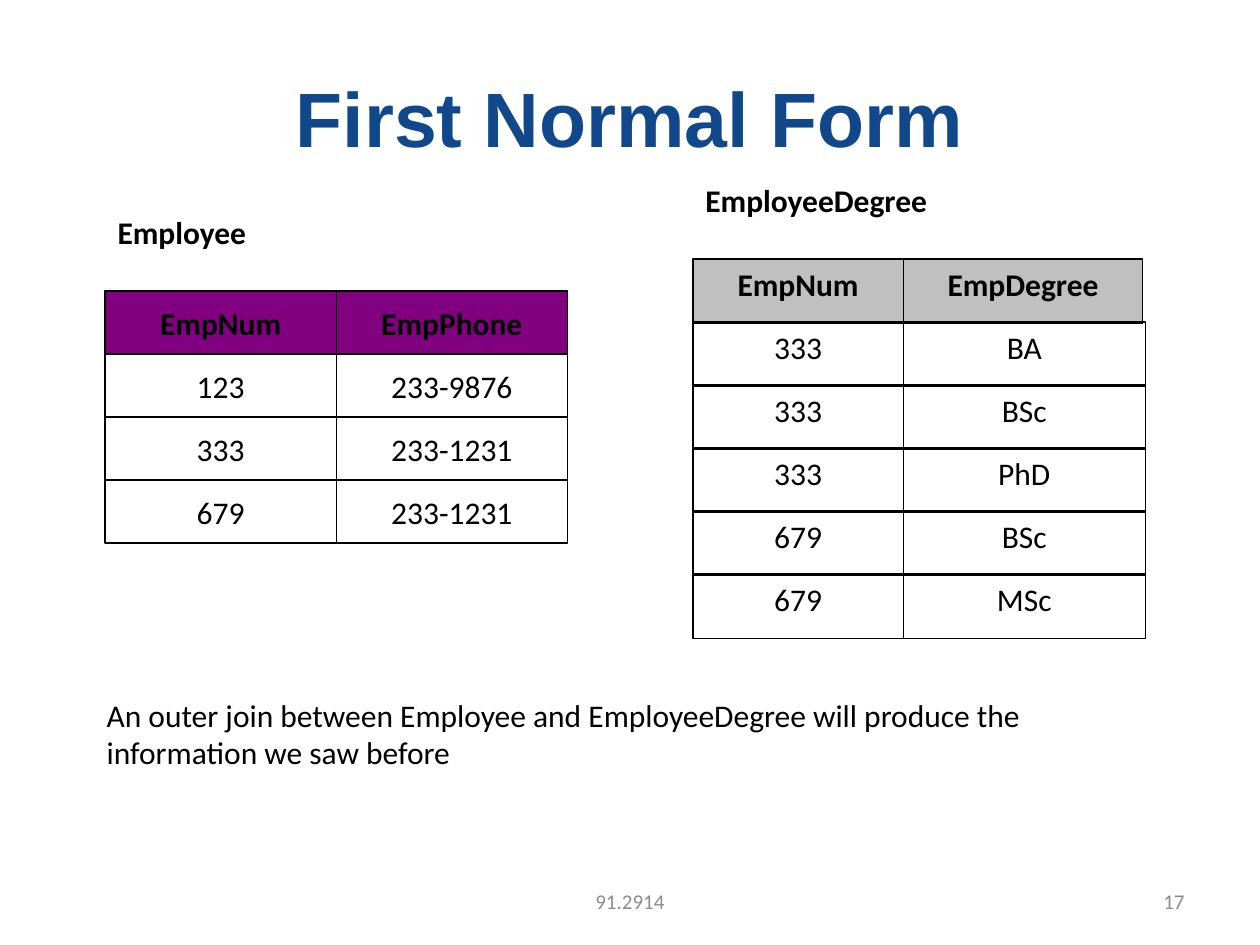
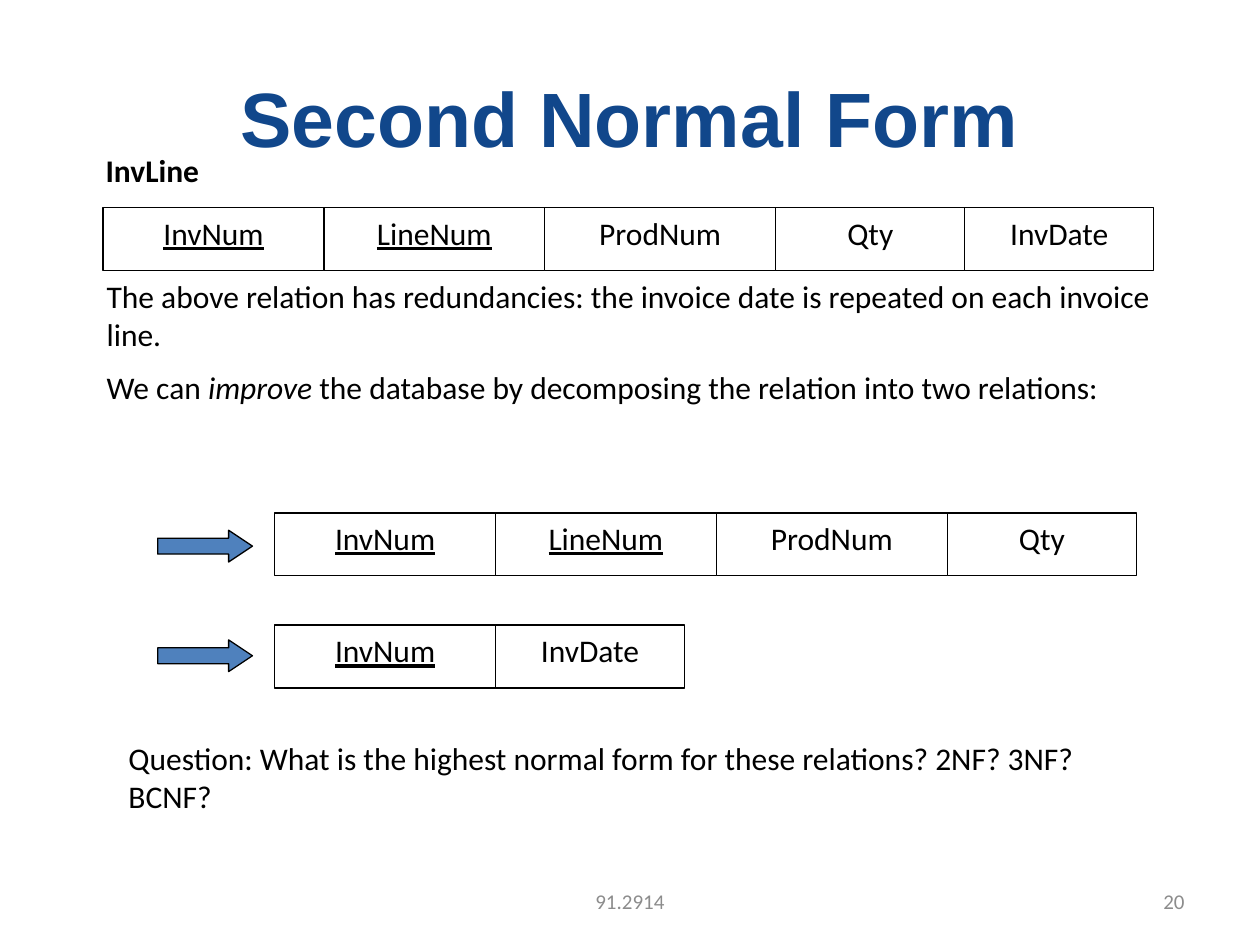
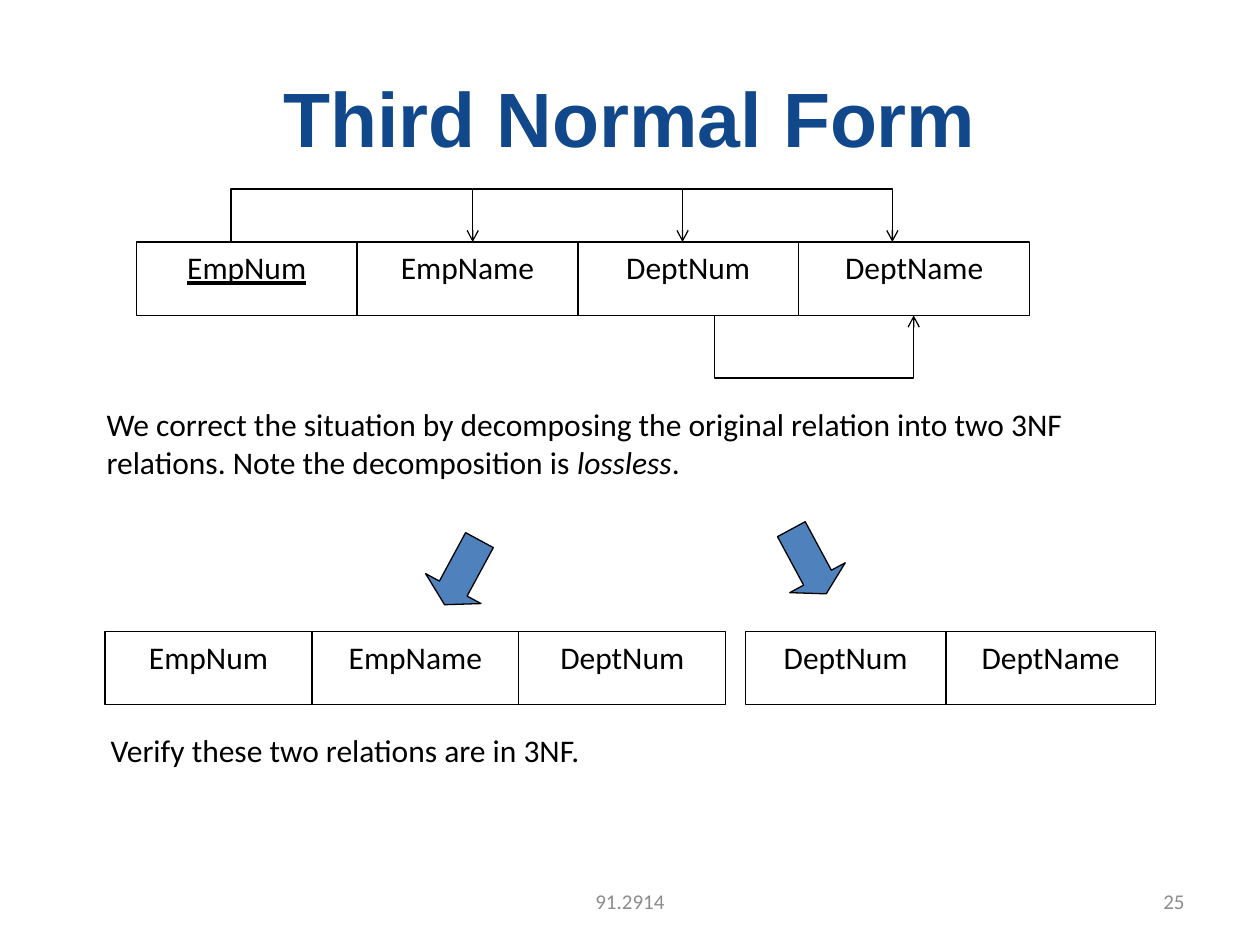
from dataclasses import dataclass

from pptx import Presentation
from pptx.dml.color import RGBColor
from pptx.enum.shapes import MSO_SHAPE
from pptx.enum.text import MSO_ANCHOR, PP_ALIGN
from pptx.oxml.ns import qn
from pptx.util import Cm, Pt
from lxml import etree

RECT, RIGHT_ARROW, DOWN_ARROW = MSO_SHAPE.RECTANGLE, MSO_SHAPE.RIGHT_ARROW, MSO_SHAPE.DOWN_ARROW
TOP, MIDDLE = MSO_ANCHOR.TOP, MSO_ANCHOR.MIDDLE
LEFT, CENTER, RIGHT = PP_ALIGN.LEFT, PP_ALIGN.CENTER, PP_ALIGN.RIGHT


@dataclass(frozen=True)
class Theme:
    title_font: str = "Arial"
    body_font: str = "Calibri"
    title_size: int = 44
    body_size: int = 18
    footer_size: int = 12
    paragraph_gap: int = 9
    line_width: float = 0.75
    title: str = "11478B"
    ink: str = "000000"
    footer: str = "8C8C8C"
    paper: str = "FFFFFF"
    purple: str = "800080"
    silver: str = "C0C0C0"
    arrow: str = "4F81BD"


THEME = Theme()

# Content: a paragraph is a list of (text, italic) runs
COURSE = "91.2914"

EMPLOYEE = [
    ("EmpNum", "EmpPhone"),
    ("123", "233-9876"),
    ("333", "233-1231"),
    ("679", "233-1231"),
]
EMPLOYEE_DEGREE = [
    ("EmpNum", "EmpDegree"),
    ("333", "BA"),
    ("333", "BSc"),
    ("333", "PhD"),
    ("679", "BSc"),
    ("679", "MSc"),
]
OUTER_JOIN = [[("An outer join between Employee and EmployeeDegree will produce "
                "the information we saw before", False)]]

INV_LINE = ("InvNum", "LineNum", "ProdNum", "Qty", "InvDate")
INV_LINE_PARTS = [("InvNum", "LineNum", "ProdNum", "Qty"), ("InvNum", "InvDate")]
INV_WIDTHS = {"InvNum": 4.45, "LineNum": 4.45, "ProdNum": 4.66, "Qty": 3.81, "InvDate": 3.81}
REDUNDANCY = [
    [("The above relation has redundancies: the invoice date is repeated "
      "on each invoice line.", False)],
    [("We can ", False), ("improve", True),
     (" the database by decomposing the relation into two relations:", False)],
]
QUESTION = [[("Question: What is the highest normal form for these relations? "
              "2NF? 3NF? BCNF?", False)]]

EMP_DEPT = ("EmpNum", "EmpName", "DeptNum", "DeptName")
EMP_PART = ("EmpNum", "EmpName", "DeptNum")
DEPT_PART = ("DeptNum", "DeptName")
LOSSLESS = [[("We correct the situation by decomposing the original relation into two "
              "3NF relations. Note the decomposition is ", False),
             ("lossless", True), (".", False)]]
VERIFY = [[("Verify these two relations are in 3NF.", False)]]


# Text and shape helpers; all lengths are in centimetres
def style(font, size=THEME.body_size, color=THEME.ink, face=THEME.body_font,
          bold=False, italic=False, underline=False):
    font.name, font.size = face, Pt(size)
    font.color.rgb = RGBColor.from_string(color)
    font.bold, font.italic, font.underline = bold, italic, underline


def box(slide, left, top, width, height):
    frame = slide.shapes.add_textbox(Cm(left), Cm(top), Cm(width), Cm(height)).text_frame
    frame.word_wrap = True
    return frame


def write_line(frame, text, align=LEFT, anchor=TOP, **look):
    frame.text = text
    frame.vertical_anchor = anchor
    paragraph = frame.paragraphs[0]
    paragraph.alignment = align
    style(paragraph.runs[0].font, **look)


def write_body(slide, left, top, width, height, paragraphs):
    frame = box(slide, left, top, width, height)
    for index, runs in enumerate(paragraphs):
        paragraph = frame.add_paragraph() if index else frame.paragraphs[0]
        if index:
            paragraph.space_before = Pt(THEME.paragraph_gap)
        for text, italic in runs:
            run = paragraph.add_run()
            run.text = text
            style(run.font, italic=italic)


def paint(shape, fill=None):
    shape.shadow.inherit = False
    if fill:
        shape.fill.solid()
        shape.fill.fore_color.rgb = RGBColor.from_string(fill)
    else:
        shape.fill.background()
    shape.line.color.rgb = RGBColor.from_string(THEME.ink)
    shape.line.width = Pt(THEME.line_width)


def draw_row(slide, left, top, widths, height, cells, keys=0, fill=THEME.paper,
             anchor=TOP, bold=False):
    """Draw adjoining cells; the first `keys` names are underlined."""
    for index, (width, text) in enumerate(zip(widths, cells)):
        cell = slide.shapes.add_shape(RECT, Cm(left), Cm(top), Cm(width), Cm(height))
        paint(cell, fill)
        cell.text_frame.word_wrap = True
        write_line(cell.text_frame, text, CENTER, anchor, bold=bold, underline=index < keys)
        left += width


def draw_relation(slide, left, top, header_widths, widths, height, rows, header_fill, anchor):
    for index, cells in enumerate(rows):
        header = index == 0
        draw_row(slide, left, top + index * ROW_PITCH, header_widths if header else widths,
                 height, cells, fill=header_fill if header else None,
                 anchor=anchor, bold=header)


def draw_block_arrow(slide, kind, left, top, width, height, head, rotation=0):
    arrow = slide.shapes.add_shape(kind, Cm(left), Cm(top), Cm(width), Cm(height))
    arrow.adjustments[1] = head
    arrow.rotation = rotation
    paint(arrow, THEME.arrow)


def draw_dependency(slide, points):
    start, *rest = [(Cm(x), Cm(y)) for x, y in points]
    builder = slide.shapes.build_freeform(*start)
    builder.add_line_segments(rest, close=False)
    route = builder.convert_to_shape()
    paint(route)
    etree.SubElement(route.line._get_or_add_ln(), qn("a:tailEnd"), type="arrow")


def new_slide(deck, title, number):
    slide = deck.slides.add_slide(deck.slide_layouts[6])
    write_line(box(slide, 1.27, 0.76, 22.86, 3.18), title, CENTER, MIDDLE,
               size=THEME.title_size, color=THEME.title, face=THEME.title_font, bold=True)
    for left, width, text, align in ((8.68, 8.04, COURSE, CENTER),
                                     (18.2, 5.93, str(number), RIGHT)):
        write_line(box(slide, left, 17.65, width, 1.02), text, align, MIDDLE,
                   size=THEME.footer_size, color=THEME.footer)
    return slide


# Slides
ROW_PITCH = 1.27
TALL_ROW = 1.48


def first_normal_form(deck):
    slide = new_slide(deck, "First Normal Form", 17)
    draw_relation(slide, 13.97, 5.22, (4.24, 4.83), (4.24, 4.88), 1.3,
                  EMPLOYEE_DEGREE, THEME.silver, TOP)
    draw_relation(slide, 2.12, 5.87, (4.66, 4.66), (4.66, 4.66), ROW_PITCH,
                  EMPLOYEE, THEME.purple, MIDDLE)
    write_body(slide, 1.9, 13.9, 21.39, 2.29, OUTER_JOIN)
    write_line(box(slide, 2.12, 4.17, 4.09, 1.27), "Employee", bold=True)
    write_line(box(slide, 13.97, 3.53, 6.63, 1.27), "EmployeeDegree", bold=True)


def second_normal_form(deck):
    slide = new_slide(deck, "Second Normal Form", 20)
    write_line(box(slide, 1.88, 2.92, 3.38, 1.27), "InvLine", bold=True)
    # Each relation: names, left, top, number of key columns
    relations = [(INV_LINE, 2.08, 4.19, 2),
                 (INV_LINE_PARTS[0], 5.54, 10.34, 2),
                 (INV_LINE_PARTS[1], 5.54, 12.6, 1)]
    for names, left, top, keys in relations:
        draw_row(slide, left, top, [INV_WIDTHS[name] for name in names],
                 ROW_PITCH, names, keys)
    for top in (10.69, 12.9):
        draw_block_arrow(slide, RIGHT_ARROW, 3.18, top, 1.91, 0.64, 0.75)
    write_body(slide, 1.9, 5.46, 21.59, 4.83, REDUNDANCY)
    write_body(slide, 2.34, 14.78, 20.75, 2.29, QUESTION)


def third_normal_form(deck):
    slide = new_slide(deck, "Third Normal Form", 25)
    row_top, rail_top = 4.88, 3.81
    row_bottom, rail_bottom = row_top + TALL_ROW, 7.62
    draw_row(slide, 2.75, row_top, (4.45, 4.45, 4.45, 4.66), TALL_ROW, EMP_DEPT, keys=1)

    # EmpNum determines every other column; DeptNum determines DeptName
    emp_num, *dependents = 4.66, 9.53, 13.76, 17.99
    draw_dependency(slide, [(emp_num, row_top), (emp_num, rail_top),
                            (dependents[0], rail_top), (dependents[0], row_top)])
    for previous, current in zip(dependents, dependents[1:]):
        draw_dependency(slide, [(previous, rail_top), (current, rail_top), (current, row_top)])
    dept_num, dept_name = 14.4, 18.42
    draw_dependency(slide, [(dept_num, row_bottom), (dept_num, rail_bottom),
                            (dept_name, rail_bottom), (dept_name, row_bottom)])

    # Decomposition
    write_body(slide, 1.9, 8.05, 22.02, 2.29, LOSSLESS)
    draw_row(slide, 2.12, 12.73, (4.17,) * 3, TALL_ROW, EMP_PART)
    draw_row(slide, 15.03, 12.73, (4.04, 4.22), TALL_ROW, DEPT_PART)
    for left, top, rotation in ((8.68, 10.8, 28.4), (15.67, 10.58, 331.7)):
        draw_block_arrow(slide, DOWN_ARROW, left, top, 1.27, 1.48, 0.29, rotation)
    write_body(slide, 1.98, 14.61, 16.51, 1.3, VERIFY)


def main():
    deck = Presentation()
    deck.slide_width, deck.slide_height = Cm(25.4), Cm(19.05)
    first_normal_form(deck)
    second_normal_form(deck)
    third_normal_form(deck)
    deck.save("out.pptx")


if __name__ == "__main__":
    main()
